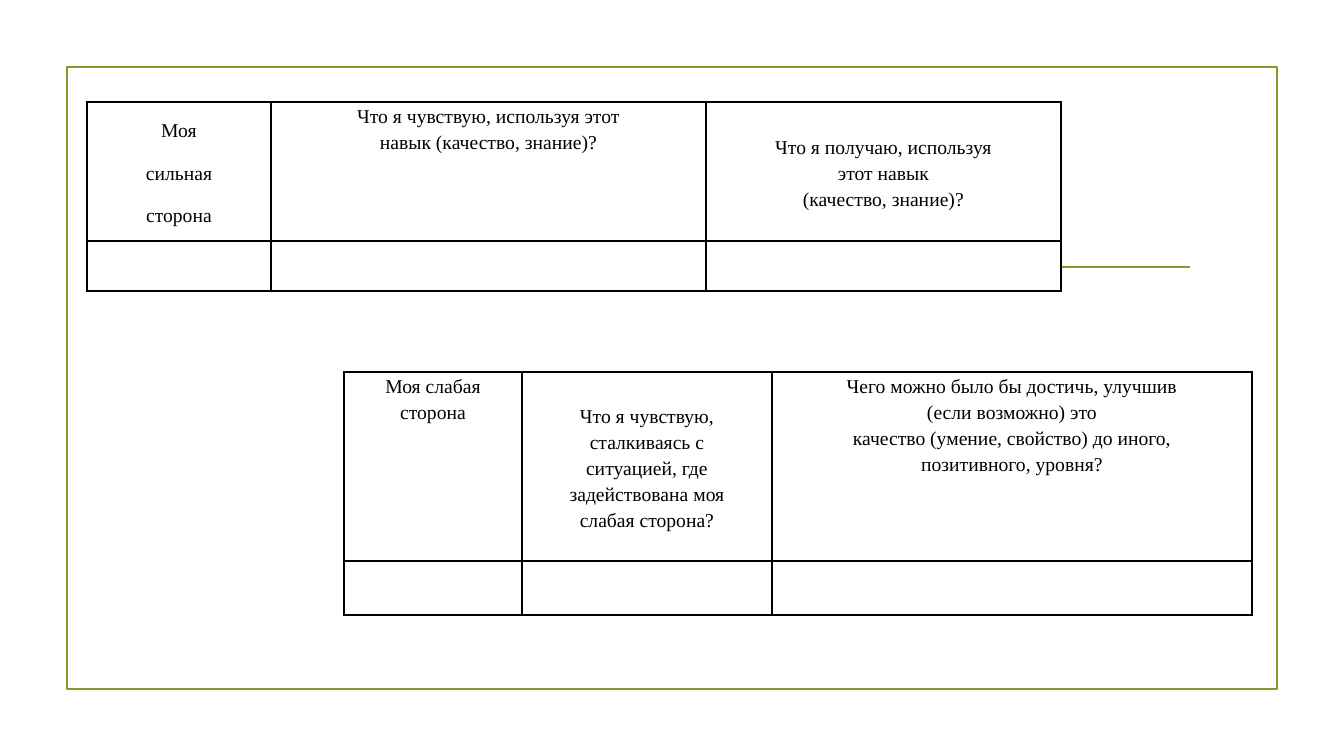
from lxml.etree import SubElement
from pptx import Presentation
from pptx.dml.color import RGBColor
from pptx.enum.shapes import MSO_CONNECTOR, MSO_SHAPE
from pptx.enum.text import MSO_ANCHOR, PP_ALIGN
from pptx.oxml.ns import qn
from pptx.util import Pt

COLORS = {"olive": "83992A", "ink": "000000", "paper": "FFFFFF"}
FONT = "Times New Roman"
SLIDE_SIZE = (1344, 756)
FRAME = (67, 67, 1210, 622)
DIVIDER = (154, 267, 1190, 267)
TOP, MIDDLE = MSO_ANCHOR.TOP, MSO_ANCHOR.MIDDLE

# Each heading: its anchor and its paragraphs; the row below is left to fill in.
WORKSHEETS = [
    {
        "corner": (87, 102),
        "columns": (184, 435, 355),
        "rows": (139, 50),
        "headings": [
            (MIDDLE, ["Моя", "сильная", "сторона"]),
            (TOP, ["Что я чувствую, используя этот\nнавык (качество, знание)?"]),
            (MIDDLE, ["Что я получаю, используя\nэтот навык\n(качество, знание)?"]),
        ],
    },
    {
        "corner": (344, 372),
        "columns": (178, 250, 480),
        "rows": (189, 54),
        "headings": [
            (TOP, ["Моя слабая\nсторона"]),
            (MIDDLE, ["Что я чувствую,\nсталкиваясь с\nситуацией, где\n"
                      "задействована моя\nслабая сторона?"]),
            (TOP, ["Чего можно было бы достичь, улучшив\n(если возможно) это\n"
                   "качество (умение, свойство) до иного,\nпозитивного, уровня?"]),
        ],
    },
]


def px(length):
    return round(length * 12192000 / SLIDE_SIZE[0])


def rgb(name):
    return RGBColor.from_string(COLORS[name])


def write(text_frame, paragraphs, size=14, color="ink", leading=18.5, gap=12):
    for index, text in enumerate(paragraphs):
        paragraph = text_frame.add_paragraph() if index else text_frame.paragraphs[0]
        paragraph.text = text
        paragraph.alignment = PP_ALIGN.CENTER
        paragraph.line_spacing = Pt(leading)
        paragraph.space_before = Pt(gap if index else 0)
        for run in paragraph.runs:
            run.font.name = FONT
            run.font.size = Pt(size)
            run.font.color.rgb = rgb(color)


def style_cell(cell):
    """Give the cell black borders and a white fill."""
    properties = cell._tc.get_or_add_tcPr()
    for side in ("lnL", "lnR", "lnT", "lnB"):
        border = SubElement(properties, qn(f"a:{side}"), w=str(Pt(1)))
        SubElement(SubElement(border, qn("a:solidFill")), qn("a:srgbClr"), val=COLORS["ink"])
    cell.fill.solid()
    cell.fill.fore_color.rgb = rgb("paper")


def add_worksheet(slide, corner, columns, rows, headings):
    box = (*corner, sum(columns), sum(rows))
    table = slide.shapes.add_table(len(rows), len(columns), *map(px, box)).table
    table.first_row = table.horz_banding = False
    for column, width in zip(table.columns, columns):
        column.width = px(width)
    for row, height in zip(table.rows, rows):
        row.height = px(height)
    for cell in table.iter_cells():
        style_cell(cell)
    for cell, (anchor, paragraphs) in zip(table.rows[0].cells, headings):
        cell.vertical_anchor = anchor
        cell.margin_left = cell.margin_right = px(1)
        cell.margin_top = cell.margin_bottom = 0
        write(cell.text_frame, paragraphs)


def add_decoration(slide):
    frame = slide.shapes.add_shape(MSO_SHAPE.RECTANGLE, *map(px, FRAME))
    frame.shadow.inherit = False
    frame.fill.background()
    divider = slide.shapes.add_connector(MSO_CONNECTOR.STRAIGHT, *map(px, DIVIDER))
    SubElement(divider._element.spPr, qn("a:effectLst"))
    for outline in (frame.line, divider.line):
        outline.color.rgb = rgb("olive")
        outline.width = Pt(1.25)


def main():
    presentation = Presentation()
    presentation.slide_width, presentation.slide_height = map(px, SLIDE_SIZE)
    slide = presentation.slides.add_slide(presentation.slide_layouts[6])
    add_decoration(slide)
    for worksheet in WORKSHEETS:
        add_worksheet(slide, **worksheet)
    presentation.save("out.pptx")


if __name__ == "__main__":
    main()
